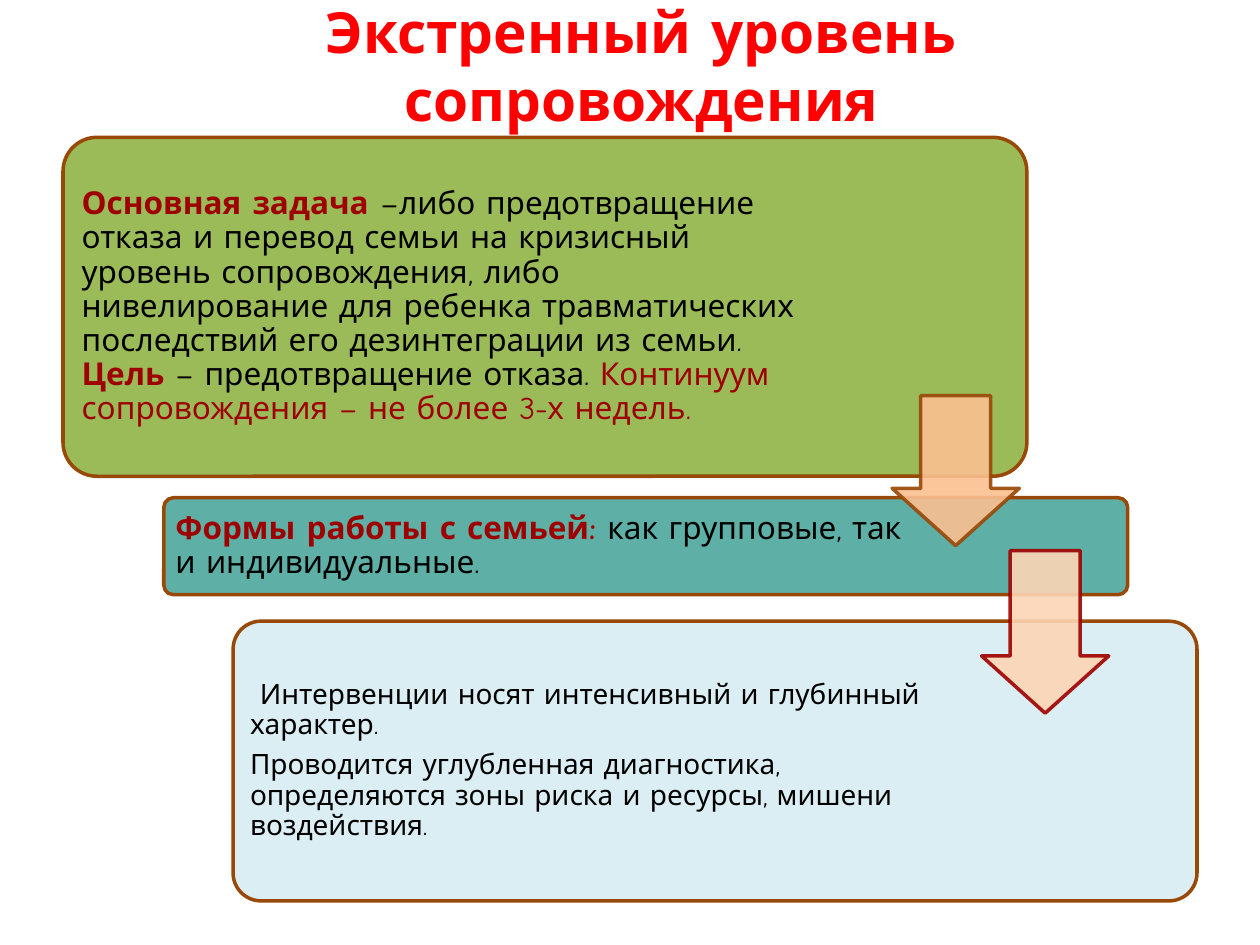
from lxml import etree
from pptx import Presentation
from pptx.dml.color import RGBColor as RGB
from pptx.enum.shapes import MSO_SHAPE as SHAPE
from pptx.enum.text import MSO_ANCHOR as ANCHOR, PP_ALIGN as ALIGN
from pptx.oxml.ns import qn
from pptx.util import Inches, Pt

WIDE, HIGH = Inches(10), Inches(7.5)
FONT = "Comic Neue"
RED = RGB(0xFF, 0x00, 0x00)
WINE = RGB(0x9E, 0x00, 0x00)
BLACK = RGB(0x00, 0x00, 0x00)
BROWN = RGB(0x98, 0x48, 0x07)
GREEN = RGB(0x9B, 0xBB, 0x59)
TEAL = RGB(0x5E, 0xAF, 0xA6)
PALE = RGB(0xDB, 0xEE, 0xF4)
PEACH = RGB(0xFA, 0xC0, 0x90)
CREAM = RGB(0xFC, 0xD5, 0xB5)
ROUND = 0.1
INSET = 0.29 * ROUND

TASK = [[
    ("Основная задача ", WINE, True),
    ("–либо предотвращение отказа и перевод семьи на кризисный уровень "
     "сопровождения, либо нивелирование для ребенка травматических "
     "последствий его дезинтеграции из семьи. ", BLACK, False),
    ("Цель", WINE, True),
    (" – предотвращение отказа. ", BLACK, False),
    ("Континуум сопровождения – не более 3-х недель.", WINE, False),
]]
FORMS = [[
    ("Формы работы с семьей: ", WINE, True),
    ("как групповые, так и индивидуальные.", BLACK, False),
]]
WORK = [
    [(" ", WINE, True),
     ("Интервенции носят интенсивный и глубинный характер.", BLACK, False)],
    [("Проводится углубленная диагностика, определяются зоны риска и "
      "ресурсы, мишени воздействия.", BLACK, False)],
]


def place(left, top, width, height):
    return [int(WIDE * left / 100), int(HIGH * top / 100),
            int(WIDE * width / 100), int(HIGH * height / 100)]


def add_form(slide, kind, area, fill, line, adjust):
    form = slide.shapes.add_shape(kind, *area)
    form.shadow.inherit = False
    for i, value in enumerate(adjust):
        form.adjustments[i] = value
    form.fill.solid()
    form.fill.fore_color.rgb = fill
    form.line.color.rgb = line
    form.line.width = Pt(2)
    return form


def add_text(slide, area, paras, size, pad):
    frame = slide.shapes.add_textbox(*area).text_frame
    frame.word_wrap = True
    frame.vertical_anchor = ANCHOR.MIDDLE
    frame.margin_left = frame.margin_right = pad
    frame.margin_top = frame.margin_bottom = pad
    for i, parts in enumerate(paras):
        para = frame.add_paragraph() if i else frame.paragraphs[0]
        for words, color, bold in parts:
            run = para.add_run()
            run.text = words
            run.font.name = FONT
            run.font.size = Pt(size)
            run.font.bold = bold
            run.font.color.rgb = color
    return frame


def add_title(slide, words):
    area = place(5.9, -1.47, 90, 16.67)
    frame = add_text(slide, area, [[(words, RED, True)]], 32.4, Inches(0.1))
    frame.paragraphs[0].alignment = ALIGN.CENTER


def add_card(slide, left, top, height, span, fill, paras, size):
    area = place(left, top, 76.5, height)
    add_form(slide, SHAPE.ROUNDED_RECTANGLE, area, fill, BROWN, [ROUND])
    x, y, _, h = area
    gap = int(h * INSET)
    inner = [x + gap, y + gap, int(WIDE * span / 100), h - 2 * gap]
    frame = add_text(slide, inner, paras, size, Inches(0.07))
    for para in frame.paragraphs:
        para.line_spacing = 0.9
        para.space_after = Pt(size * 0.35)


def add_arrow(slide, left, top, height, fill, line):
    area = place(left, top, 10.1, height)
    arrow = add_form(slide, SHAPE.DOWN_ARROW, area, fill, line, [0.55, 0.45])
    arrow.adjustments[0], arrow.adjustments[1] = 0.55, 0.45
    for color in arrow.element.spPr.iter(qn("a:srgbClr")):
        etree.SubElement(color, qn("a:alpha")).set("val", "90000")


def main():
    deck = Presentation()
    deck.slide_width, deck.slide_height = WIDE, HIGH
    slide = deck.slides.add_slide(deck.slide_layouts[6])
    add_title(slide, "Экстренный уровень сопровождения")
    add_card(slide, 5, 14.53, 35.87, 59.1, GREEN, TASK, 18)
    add_card(slide, 13, 52.67, 10.27, 59.2, TEAL, FORMS, 18)
    add_card(slide, 18.5, 65.73, 29.6, 58.4, PALE, WORK, 16)
    add_arrow(slide, 70.8, 41.87, 15.87, PEACH, BROWN)
    add_arrow(slide, 77.9, 58.27, 17.2, CREAM, WINE)
    deck.save("out.pptx")


if __name__ == "__main__":
    main()
